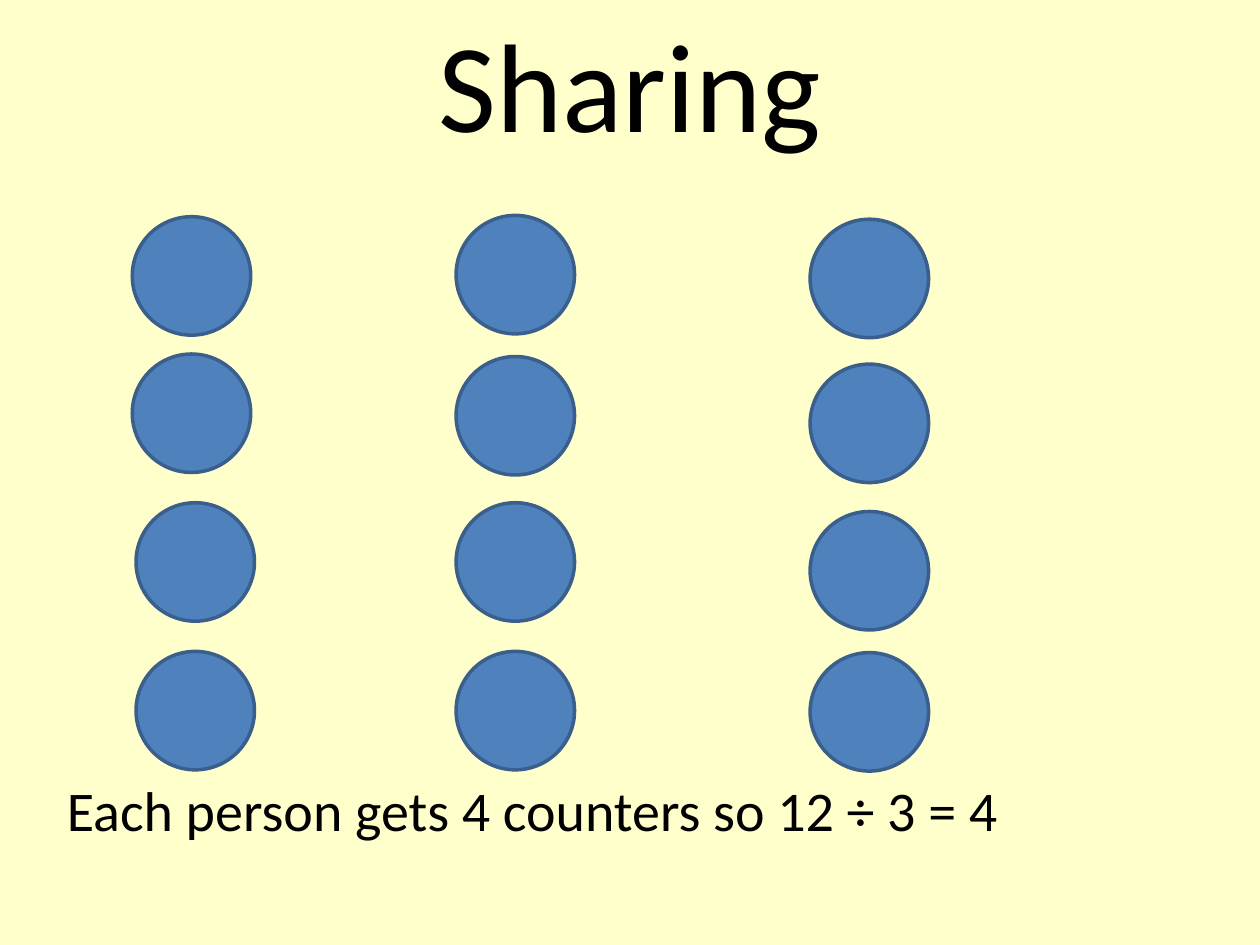
from pptx import Presentation
from pptx.dml.color import RGBColor
from pptx.enum.shapes import MSO_SHAPE
from pptx.enum.text import MSO_ANCHOR, MSO_AUTO_SIZE, PP_ALIGN
from pptx.util import Inches, Pt
from lxml import etree

OVAL = MSO_SHAPE.OVAL
MIDDLE, BOTTOM = MSO_ANCHOR.MIDDLE, MSO_ANCHOR.BOTTOM
LEFT, CENTER = PP_ALIGN.LEFT, PP_ALIGN.CENTER
NO_FIT = MSO_AUTO_SIZE.NONE
NS = "{http://schemas.openxmlformats.org/drawingml/2006/main}"

COLORS = {"back": "FFFFCC", "text": "000000", "disc": "4F81BD", "edge": "3A5F8C"}
SIZE = 0.94
COLUMNS = [
    [(1.05, 1.72), (1.05, 2.81), (1.08, 3.99), (1.08, 5.17)],
    [(3.62, 1.71), (3.62, 2.83), (3.62, 3.99), (3.62, 5.17)],
    [(6.43, 1.74), (6.43, 2.89), (6.43, 4.06), (6.43, 5.18)],
]


def color(name):
    return RGBColor.from_string(COLORS[name])


def write(holder, text, box, size, align, anchor, inset):
    holder.left, holder.top, holder.width, holder.height = map(Inches, box)
    frame = holder.text_frame
    frame.text = text
    frame.word_wrap = True
    frame.auto_size = NO_FIT
    frame.vertical_anchor = anchor
    frame.margin_bottom = Inches(inset)
    para = frame.paragraphs[0]
    para.alignment = align
    font = para.runs[0].font
    font.name, font.size = "Calibri", Pt(size)
    font.color.rgb = color("text")
    return para


def drop_bullet(para):
    props = para._p.get_or_add_pPr()
    props.set("marL", "0")
    props.set("indent", "0")
    etree.SubElement(props, NS + "buNone")


def add_disc(slide, left, top):
    disc = slide.shapes.add_shape(
        OVAL, Inches(left), Inches(top), Inches(SIZE), Inches(SIZE))
    disc.shadow.inherit = False
    disc.fill.solid()
    disc.fill.fore_color.rgb = color("disc")
    disc.line.color.rgb = color("edge")
    disc.line.width = Pt(2)


def main():
    deck = Presentation()
    deck.slide_width, deck.slide_height = Inches(10), Inches(7.5)
    slide = deck.slides.add_slide(deck.slide_layouts[1])
    slide.background.fill.solid()
    slide.background.fill.fore_color.rgb = color("back")
    title, body = slide.placeholders
    write(title, "Sharing", (0.5, 0.3, 9, 1.25), 72, CENTER, MIDDLE, 0.6)
    para = write(body, "Each person gets 4 counters so 12 ÷ 3 = 4",
                 (0.43, 1.72, 9, 5.31), 32, LEFT, BOTTOM, 0.34)
    drop_bullet(para)
    for column in COLUMNS:
        for left, top in column:
            add_disc(slide, left, top)
    deck.save("out.pptx")


if __name__ == "__main__":
    main()
